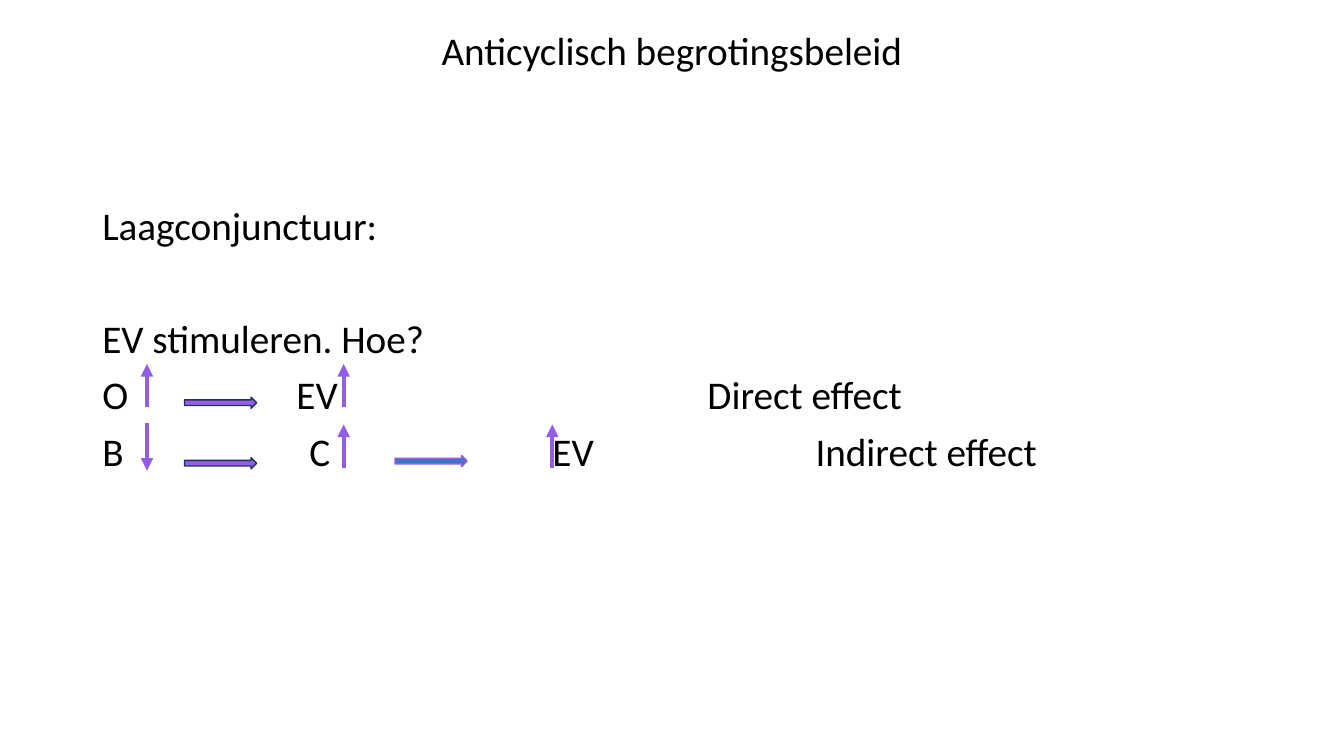
from dataclasses import dataclass

from lxml.etree import SubElement
from pptx import Presentation
from pptx.dml.color import RGBColor
from pptx.enum.shapes import MSO_CONNECTOR as Connector, MSO_SHAPE as Shape
from pptx.enum.text import MSO_ANCHOR as Anchor, MSO_AUTO_SIZE as AutoSize, PP_ALIGN as Align
from pptx.oxml.ns import qn
from pptx.util import Pt


@dataclass(frozen=True)
class Theme:
    font: str = "Calibri"
    size: float = 28
    ink: RGBColor = RGBColor.from_string("000000")
    purple: RGBColor = RGBColor.from_string("945DE8")
    navy: RGBColor = RGBColor.from_string("1E3256")
    blue: RGBColor = RGBColor.from_string("4472C4")


@dataclass(frozen=True)
class Box:
    left: float
    top: float
    width: float
    height: float

    def lengths(self):
        return Pt(self.left), Pt(self.top), Pt(self.width), Pt(self.height)


THEME = Theme()
TITLE_BOX = Box(168.5, 15.1, 622.8, 41)
BODY_BOX = Box(66, 144, 828, 486.7 - 144)
ROW_STEP = 43.2
LINES = [
    ("Laagconjunctuur:", 0, []),
    ("EV stimuleren. Hoe?", 50.5, []),
    ("O\tEV\tDirect effect", 10, [138.7, 432.3]),
    ("B\tC\tEV\tIndirect effect", 10, [148, 321.6, 509.5]),
]


def style_font(para):
    para.font.name = THEME.font
    para.font.size = Pt(THEME.size)
    para.font.color.rgb = THEME.ink


def add_title(page, box):
    title = page.shapes.title
    title.left, title.top, title.width, title.height = box.lengths()
    frame = title.text_frame
    frame.text = "Anticyclisch begrotingsbeleid"
    frame.word_wrap = True
    frame.auto_size = AutoSize.NONE
    frame.vertical_anchor = Anchor.TOP
    para = frame.paragraphs[0]
    para.alignment = Align.CENTER
    para.line_spacing = 1.0
    style_font(para)


def add_tab_stops(para, stops):
    tabs = SubElement(para._p.get_or_add_pPr(), qn("a:tabLst"))
    for stop in stops:
        SubElement(tabs, qn("a:tab"), pos=str(Pt(stop)), algn="l")


def add_explanation(page, box):
    frame = page.shapes.add_textbox(*box.lengths()).text_frame
    frame.word_wrap = True
    for index, (text, space, stops) in enumerate(LINES):
        para = frame.paragraphs[0] if index == 0 else frame.add_paragraph()
        para.text = text
        para.alignment = Align.LEFT
        para.line_spacing = 0.9
        para.space_before = Pt(space)
        if stops:
            add_tab_stops(para, stops)
        style_font(para)


def add_change_arrow(page, x, start, end):
    arrow = page.shapes.add_connector(Connector.STRAIGHT, Pt(x), Pt(start), Pt(x), Pt(end))
    arrow.line.color.rgb = THEME.purple
    arrow.line.width = Pt(3)
    SubElement(arrow.line._get_or_add_ln(), qn("a:tailEnd"), type="triangle")
    SubElement(arrow._element.spPr, qn("a:effectLst"))


def add_effect_arrow(page, box, fill, outline):
    arrow = page.shapes.add_shape(Shape.RIGHT_ARROW, *box.lengths())
    arrow.shadow.inherit = False
    arrow.fill.solid()
    arrow.fill.fore_color.rgb = fill
    arrow.line.color.rgb = outline
    arrow.line.width = Pt(1)


def add_arrows(page, box):
    spending_x, result_x, indirect_x = (box.left + x for x in (39, 179.5, 328.5))
    first_top = box.top + 116
    second_top = first_top + ROW_STEP
    for x, top in ((spending_x, first_top), (result_x, first_top),
                   (result_x, second_top), (indirect_x, second_top)):
        add_change_arrow(page, x, top + 31, top)
    add_change_arrow(page, spending_x, second_top - 1, second_top + 33)

    for x, y, fill, outline in (
        (65.8, 139.7, THEME.purple, THEME.navy),
        (65.8, 139.7 + ROW_STEP, THEME.purple, THEME.navy),
        (216.2, 138.2 + ROW_STEP, THEME.blue, THEME.purple),
    ):
        add_effect_arrow(page, Box(box.left + x, box.top + y, 51.5, 8), fill, outline)


def main():
    deck = Presentation()
    deck.slide_width, deck.slide_height = Pt(960), Pt(540)
    page = deck.slides.add_slide(deck.slide_layouts[5])
    add_explanation(page, BODY_BOX)
    add_arrows(page, BODY_BOX)
    add_title(page, TITLE_BOX)
    deck.save("out.pptx")


if __name__ == "__main__":
    main()
